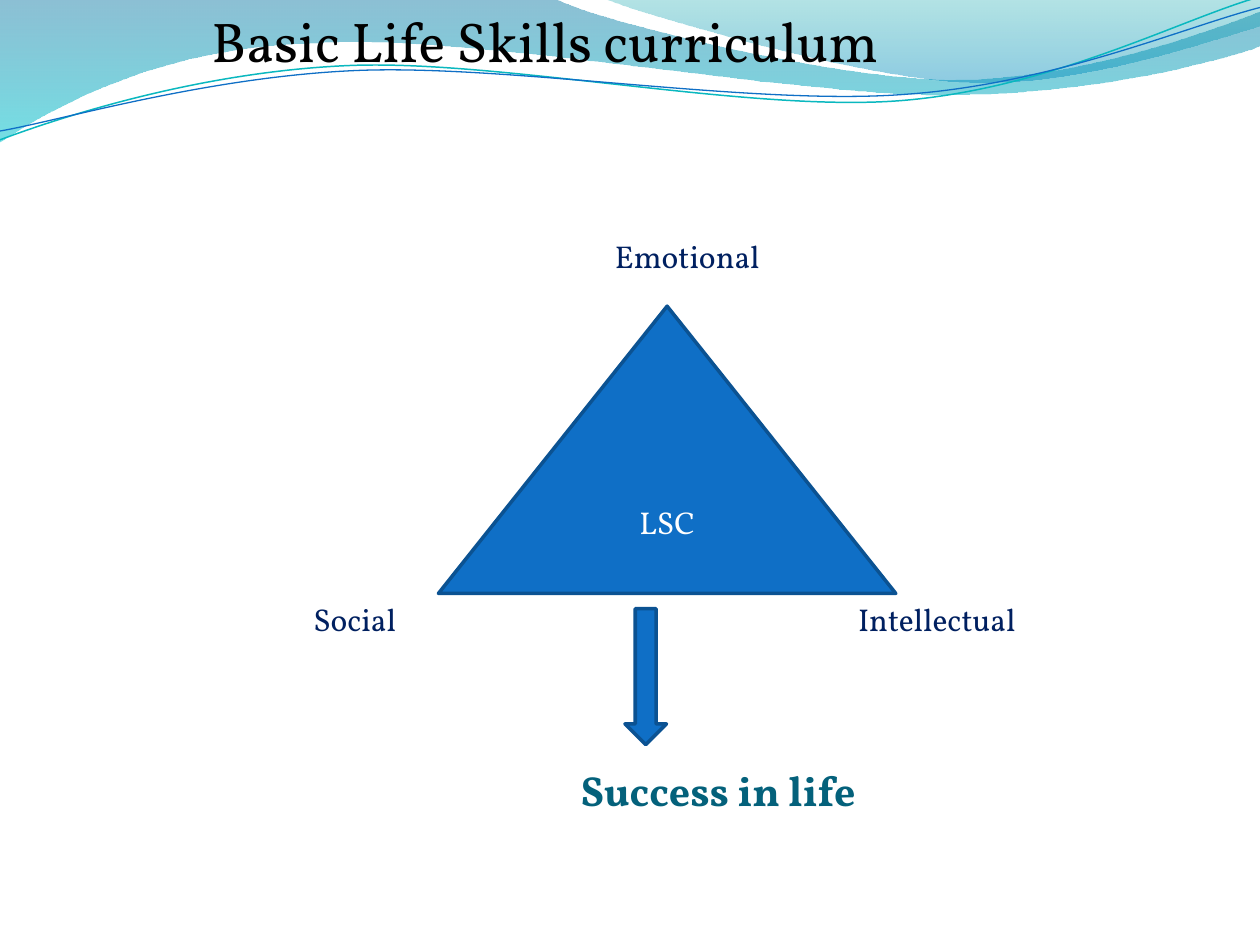
import math
from lxml import etree
from pptx import Presentation
from pptx.dml.color import RGBColor
from pptx.enum import shapes, text
from pptx.oxml import ns
from pptx.util import Inches, Pt

FONT = "Vollkorn"
INK = {
    "black": "000000", "white": "FFFFFF", "navy": "002060", "teal": "04617B",
    "blue": "0F6FC6", "edge": "0B5292", "aqua": "0AB8BF",
    "deep": "0074A1", "cyan": "00C6CF", "green": "00A1A9", "sky": "008BBF",
}
TILT = -2.7
BANDS = [
    ([[(0, 0)], [(4.4, -0.01)],
      [(4.76, 0.17), (6.64, 0.63), (7.58, 0.63)],
      [(8.53, 0.63), (9.58, 0.26), (10, 0.09)], [(10.01, 0.36)],
      [(9.83, 0.44), (8.7, 0.76), (7.46, 0.75)],
      [(6.22, 0.75), (3.82, 0.28), (2.57, 0.34)],
      [(1.29, 0.36), (0.46, 0.83), (-0.01, 1.13)], [(0, 0)]],
     [("deep", 45), ("cyan", 55)]),
    ([[(4.79, -0.01)],
      [(5.09, 0.11), (6.82, 0.62), (7.69, 0.65)],
      [(8.56, 0.69), (9.61, 0.32), (10, 0.21)], [(10, 0)], [(4.79, -0.01)]],
     [("green", 30), ("sky", 45)]),
]
WAVES = [
    ([[(0, 1.11)],
      [(0.48, 0.93), (1.58, 0.57), (2.77, 0.52)],
      [(3.95, 0.47), (5.93, 0.89), (7.13, 0.8)],
      [(8.33, 0.71), (9.38, 0.15), (9.98, -0.02)]], "aqua", 0.85, (4.99, 0.57)),
    ([[(0, 1.04)],
      [(0.47, 0.96), (1.64, 0.61), (2.83, 0.56)],
      [(4.03, 0.51), (5.97, 0.84), (7.17, 0.75)],
      [(8.36, 0.67), (9.41, 0.21), (10, 0.06)]], "blue", 0.75, (5, 0.59)),
]


def color(name):
    """Return the named colour."""
    return RGBColor.from_string(INK[name])


def level(route, hub):
    """Turn a tilted route about its hub until it lies level."""
    cos, sin = math.cos(math.radians(-TILT)), math.sin(math.radians(-TILT))
    cx, cy = hub
    return [[(cx + (x - cx) * cos - (y - cy) * sin, cy + (x - cx) * sin + (y - cy) * cos)
             for x, y in part] for part in route]


def curve(slide, box, route, close):
    """Draw an outline of corners and cubic curves relative to the box."""
    left, top = box[:2]
    pts = [(Inches(left + x), Inches(top + y)) for part in route for x, y in part]
    pen = slide.shapes.build_freeform(*pts[0])
    pen.add_line_segments(pts[1:], close=close)
    shape = pen.convert_to_shape()
    shape.shadow.inherit = False
    legs = iter(list(shape._element.iter(ns.qn("a:lnTo"))))
    for part in route[1:]:
        first, *rest = [next(legs) for _ in part]
        if rest:
            first.tag = ns.qn("a:cubicBezTo")
            for leg in rest:
                first.append(leg[0])
                leg.getparent().remove(leg)
    return shape


def fade(shape, stops):
    """Fill a shape with a downward gradient of translucent colours."""
    shape.fill.gradient()
    shape.fill.gradient_angle = 270
    for stop, (name, alpha) in zip(shape.fill.gradient_stops, stops):
        stop.color.rgb = color(name)
    marks = shape._element.spPr.iter(ns.qn("a:srgbClr"))
    for mark, (name, alpha) in zip(marks, stops):
        etree.SubElement(mark, ns.qn("a:alpha"), val=str(alpha * 1000))


def banner(slide, box):
    """Draw the waves along the top of the slide."""
    for route, stops in BANDS:
        band = curve(slide, box, route, True)
        fade(band, stops)
        band.line.fill.background()
    for route, name, width, hub in WAVES:
        wave = curve(slide, box, level(route, hub), False)
        wave.rotation = TILT
        wave.fill.background()
        wave.line.color.rgb = color(name)
        wave.line.width = Pt(width)


def write(shape, words, size, name, align=text.PP_ALIGN.CENTER, bold=False):
    """Put one styled line of text in a shape."""
    frame = shape.text_frame
    frame.word_wrap = True
    line = frame.paragraphs[0]
    line.text = words
    line.alignment = align
    line.font.name = FONT
    line.font.size = Pt(size)
    line.font.bold = bold
    line.font.color.rgb = color(name)


def label(slide, box, words, size, name, **style):
    """Add a text box."""
    area = slide.shapes.add_textbox(*map(Inches, box))
    write(area, words, size, name, **style)


def solid(slide, kind, box):
    """Add a blue shape with a darker edge."""
    shape = slide.shapes.add_shape(kind, *map(Inches, box))
    shape.shadow.inherit = False
    shape.fill.solid()
    shape.fill.fore_color.rgb = color("blue")
    shape.line.color.rgb = color("edge")
    shape.line.width = Pt(2)
    return shape


def diagram(slide, box):
    """Draw the triangle of skills and the arrow to the outcome."""
    left, top = box[:2]
    kinds = shapes.MSO_SHAPE
    peak = solid(slide, kinds.ISOSCELES_TRIANGLE, (left + 2.15, top + 0.6, 3.63, 2.28))
    write(peak, "LSC", 18, "white")
    peak.text_frame.vertical_anchor = text.MSO_ANCHOR.MIDDLE
    for words, x, y in [("Emotional", 2.64, 0), ("Social", 0, 2.88),
                        ("Intellectual", 4.62, 2.88)]:
        label(slide, (left + x, top + y, 2.97, 0.58), words, 18, "navy")
    solid(slide, kinds.DOWN_ARROW, (left + 3.63, top + 3, 0.33, 1.08))
    label(slide, (left + 1.32, top + 4.19, 6.1, 0.73), "Success in life", 24, "teal",
          bold=True)


def main():
    """Build and save the slide."""
    deck = Presentation()
    deck.slide_width, deck.slide_height = Inches(10), Inches(7.5)
    slide = deck.slides.add_slide(deck.slide_layouts[6])
    banner(slide, (0, 0, 10, 1.14))
    label(slide, (1.58, 0, 6.67, 1.18), "Basic Life Skills curriculum", 32, "black",
          align=text.PP_ALIGN.LEFT)
    diagram(slide, (1.33, 1.83, 7.59, 4.92))
    deck.save("out.pptx")


if __name__ == "__main__":
    main()
